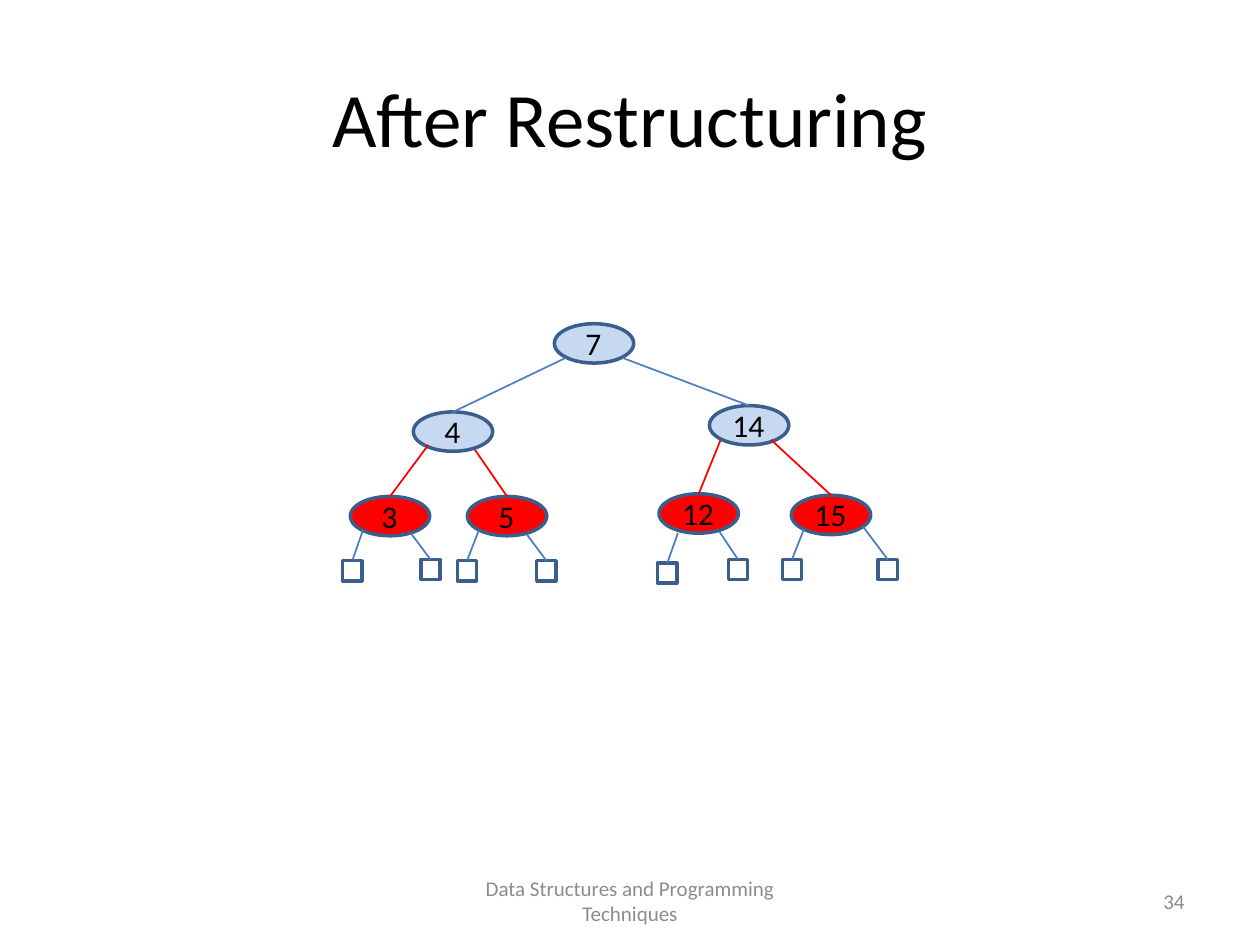
import dataclasses

import pptx
import pptx.dml.color
import pptx.enum.shapes
import pptx.enum.text
import pptx.oxml.ns
import pptx.util
from lxml import etree

Pt = pptx.util.Pt
Shape = pptx.enum.shapes.MSO_SHAPE
Align = pptx.enum.text.PP_ALIGN
Anchor = pptx.enum.text.MSO_ANCHOR


@dataclasses.dataclass(frozen=True)
class Theme:
    font: str = "Calibri"
    title_size: int = 44
    label_size: int = 18
    footer_size: int = 12
    text: str = "000000"
    muted: str = "8C8C8C"
    outline: str = "3A5F8C"
    black_node: str = "C6D9F1"
    red: str = "FF0000"
    black_edge: str = "4F81BD"
    leaf_edge: str = "4B7EBC"


NODE_SIZE = (45.36, 22.5)
LEAF_SIZE = (11, 11.5)
LABEL_SIZE = (35.28, 29)
LABEL_OFFSET = (4.6, -3.5)

# key: (left, top, is red)
NODES = {
    "7": (316.8, 185, False),
    "4": (236.2, 235.4, False),
    "14": (405.4, 231.8, False),
    "3": (200.2, 283.7, True),
    "5": (267.1, 283.7, True),
    "12": (376.6, 282.2, True),
    "15": (452.2, 283, True),
}

# parent, child, start of the edge
EDGES = [
    ("7", "4", (323.3, 204.5)),
    ("7", "14", (355.7, 204.5)),
    ("4", "3", (244.8, 254.2)),
    ("4", "5", (271.4, 257)),
    ("14", "12", (411.8, 251.3)),
    ("14", "15", (440.6, 251.3)),
]

# leaf corner, start of the edge that leads to it
LEAVES = [
    ((195.8, 320.4), (207.4, 303.1)),
    ((240.5, 319.7), (234.7, 304.6)),
    ((261.4, 320.4), (273.6, 303.1)),
    ((306.7, 320.4), (301, 305.3)),
    ((375.8, 321.8), (387.4, 304.6)),
    ((416.2, 319.7), (411.1, 303.8)),
    ((447.1, 319.7), (459.4, 302.4)),
    ((501.8, 319.7), (493.2, 301)),
]


class TreeSlide:
    """Holds the theme and the slide being drawn; lengths are in points."""

    def __init__(self, slide, theme):
        self.slide = slide
        self.theme = theme

    def color(self, value):
        return pptx.dml.color.RGBColor.from_string(value)

    def fill_frame(self, frame, text, size, color, align, anchor):
        frame.word_wrap = True
        frame.vertical_anchor = anchor
        paragraph = frame.paragraphs[0]
        paragraph.text = text
        paragraph.alignment = align
        paragraph.font.name = self.theme.font
        paragraph.font.size = Pt(size)
        paragraph.font.color.rgb = self.color(color)

    def title(self, text, left, top, width, height):
        title = self.slide.shapes.title
        title.left, title.top = Pt(left), Pt(top)
        title.width, title.height = Pt(width), Pt(height)
        self.fill_frame(title.text_frame, text, self.theme.title_size,
                        self.theme.text, Align.CENTER, Anchor.MIDDLE)

    def text(self, text, box, size, color, align=Align.CENTER, anchor=Anchor.TOP):
        textbox = self.slide.shapes.add_textbox(*map(Pt, box))
        self.fill_frame(textbox.text_frame, text, size, color, align, anchor)

    def footer(self, text, box, align):
        self.text(text, box, self.theme.footer_size, self.theme.muted,
                  align, Anchor.MIDDLE)

    def outlined(self, kind, corner, size, fill=None):
        shape = self.slide.shapes.add_shape(kind, *map(Pt, corner + size))
        shape.shadow.inherit = False
        if fill:
            shape.fill.solid()
            shape.fill.fore_color.rgb = self.color(fill)
        else:
            shape.fill.background()
        shape.line.color.rgb = self.color(self.theme.outline)
        shape.line.width = Pt(2)
        return shape

    def node(self, left, top, is_red):
        fill = self.theme.red if is_red else self.theme.black_node
        return self.outlined(Shape.OVAL, (left, top), NODE_SIZE, fill)

    def label(self, text, left, top):
        corner = (left + LABEL_OFFSET[0], top + LABEL_OFFSET[1])
        self.text(text, corner + LABEL_SIZE, self.theme.label_size, self.theme.text)

    def leaf(self, corner):
        return self.outlined(Shape.RECTANGLE, corner, LEAF_SIZE)

    def edge(self, start, child, color):
        """Draw a line from a point to the top middle of the child."""
        x, y = map(Pt, start)
        line = self.slide.shapes.add_connector(
            pptx.enum.shapes.MSO_CONNECTOR.STRAIGHT, x, y, x, y)
        line.end_connect(child, 0)
        line.line.color.rgb = self.color(color)
        line.line.width = Pt(1)
        properties = line._element.spPr
        etree.SubElement(properties, pptx.oxml.ns.qn("a:effectLst"))


def main():
    theme = Theme()
    presentation = pptx.Presentation()
    presentation.slide_width, presentation.slide_height = Pt(720), Pt(540)
    title_only = presentation.slide_layouts[5]
    tree = TreeSlide(presentation.slides.add_slide(title_only), theme)

    tree.title("After Restructuring", 36, 21.6, 648, 90)
    tree.footer("Data Structures and Programming Techniques",
                (246, 500.5, 228, 28.75), Align.CENTER)
    tree.footer("34", (516, 500.5, 168, 28.75), Align.RIGHT)

    nodes = {key: tree.node(*place) for key, place in NODES.items()}
    for parent, child, start in EDGES:
        color = theme.black_edge if parent == "7" else theme.red
        tree.edge(start, nodes[child], color)
    for corner, start in LEAVES:
        tree.edge(start, tree.leaf(corner), theme.leaf_edge)
    for key, (left, top, _) in NODES.items():
        tree.label(key, left, top)

    presentation.save("out.pptx")


if __name__ == "__main__":
    main()
